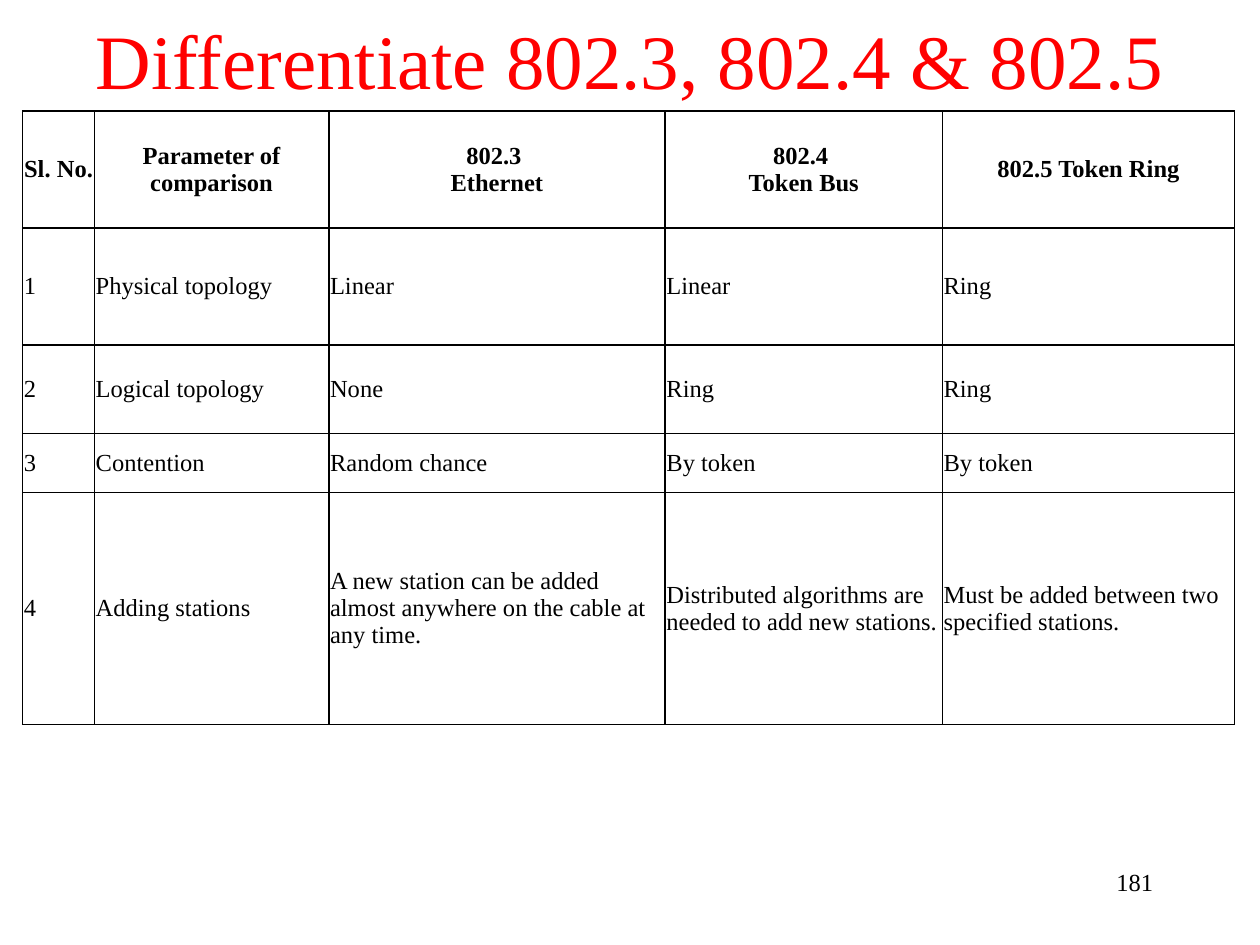
from dataclasses import dataclass

import pptx
import pptx.dml.color
import pptx.enum.text
import pptx.oxml
import pptx.oxml.ns
import pptx.util
from pptx.dml.color import RGBColor
from pptx.enum.text import MSO_ANCHOR, PP_ALIGN
from pptx.util import Inches

FONT = "Times New Roman"
RED = RGBColor(0xFF, 0x00, 0x00)
BLACK = RGBColor(0x00, 0x00, 0x00)

COLUMN_WIDTHS = (0.57, 1.86, 2.67, 2.2, 2.32)


@dataclass(frozen=True)
class ComparisonRow:
    height: float
    cells: tuple[str, ...]
    is_header: bool = False


COMPARISON = (
    ComparisonRow(0.93, ("Sl. No.", "Parameter of comparison", "802.3 \nEthernet",
                         "802.4 \nToken Bus", "802.5 Token Ring"), is_header=True),
    ComparisonRow(0.93, ("1", "Physical topology", "Linear", "Linear", "Ring")),
    ComparisonRow(0.7, ("2", "Logical topology", "None", "Ring", "Ring")),
    ComparisonRow(0.47, ("3", "Contention", "Random chance", "By token", "By token")),
    ComparisonRow(1.84, ("4", "Adding stations",
                         "A new station can be added almost anywhere on the cable at any time.",
                         "Distributed algorithms are needed to add new stations.",
                         "Must be added between two specified stations.")),
)


def write_text(frame, text: str, size: float, color: RGBColor,
               align: PP_ALIGN, bold: bool = False) -> None:
    frame.word_wrap = True
    frame.text = text
    for paragraph in frame.paragraphs:
        paragraph.alignment = align
        paragraph.font.name = FONT
        paragraph.font.size = pptx.util.Pt(size)
        paragraph.font.bold = bold
        paragraph.font.color.rgb = color


def add_label(slide, left: float, top: float, width: float, height: float, text: str,
              size: float, color: RGBColor, align: PP_ALIGN, anchor: MSO_ANCHOR) -> None:
    frame = slide.shapes.add_textbox(
        Inches(left), Inches(top), Inches(width), Inches(height)).text_frame
    frame.vertical_anchor = anchor
    write_text(frame, text, size, color, align)


def add_borders(cell, color: RGBColor, width: float) -> None:
    properties = cell._tc.get_or_add_tcPr()
    for position, side in enumerate(("lnL", "lnR", "lnT", "lnB")):
        properties.insert(position, pptx.oxml.parse_xml(
            f'<a:{side} {pptx.oxml.ns.nsdecls("a")} w="{pptx.util.Pt(width)}">'
            f'<a:solidFill><a:srgbClr val="{color}"/></a:solidFill></a:{side}>'))


def add_comparison_table(slide, left: float, top: float,
                         rows: tuple[ComparisonRow, ...]) -> None:
    table = slide.shapes.add_table(
        len(rows), len(COLUMN_WIDTHS), Inches(left), Inches(top),
        Inches(sum(COLUMN_WIDTHS)), Inches(sum(row.height for row in rows))).table
    table.first_row = table.horz_banding = False
    for column, width in zip(table.columns, COLUMN_WIDTHS):
        column.width = Inches(width)
    for table_row, row in zip(table.rows, rows):
        table_row.height = Inches(row.height)
        align = PP_ALIGN.CENTER if row.is_header else PP_ALIGN.LEFT
        for cell, text in zip(table_row.cells, row.cells):
            cell.margin_left = cell.margin_right = Inches(0.01)
            cell.margin_top = cell.margin_bottom = 0
            cell.vertical_anchor = MSO_ANCHOR.MIDDLE
            cell.fill.background()
            add_borders(cell, BLACK, 1)
            write_text(cell.text_frame, text, 14, BLACK, align, row.is_header)


def main() -> None:
    presentation = pptx.Presentation()
    presentation.slide_width = Inches(10)
    presentation.slide_height = Inches(7.5)
    slide = presentation.slides.add_slide(presentation.slide_layouts[6])

    # Title
    add_label(slide, 0, 0.08, 10, 0.77, "Differentiate 802.3, 802.4 & 802.5",
              44, RED, PP_ALIGN.CENTER, MSO_ANCHOR.MIDDLE)

    # Comparison of the three standards
    add_comparison_table(slide, 0.18, 0.88, COMPARISON)

    # Page number
    add_label(slide, 7.17, 6.83, 2.08, 0.5, "181",
              14, BLACK, PP_ALIGN.RIGHT, MSO_ANCHOR.TOP)

    presentation.save("out.pptx")


if __name__ == "__main__":
    main()
